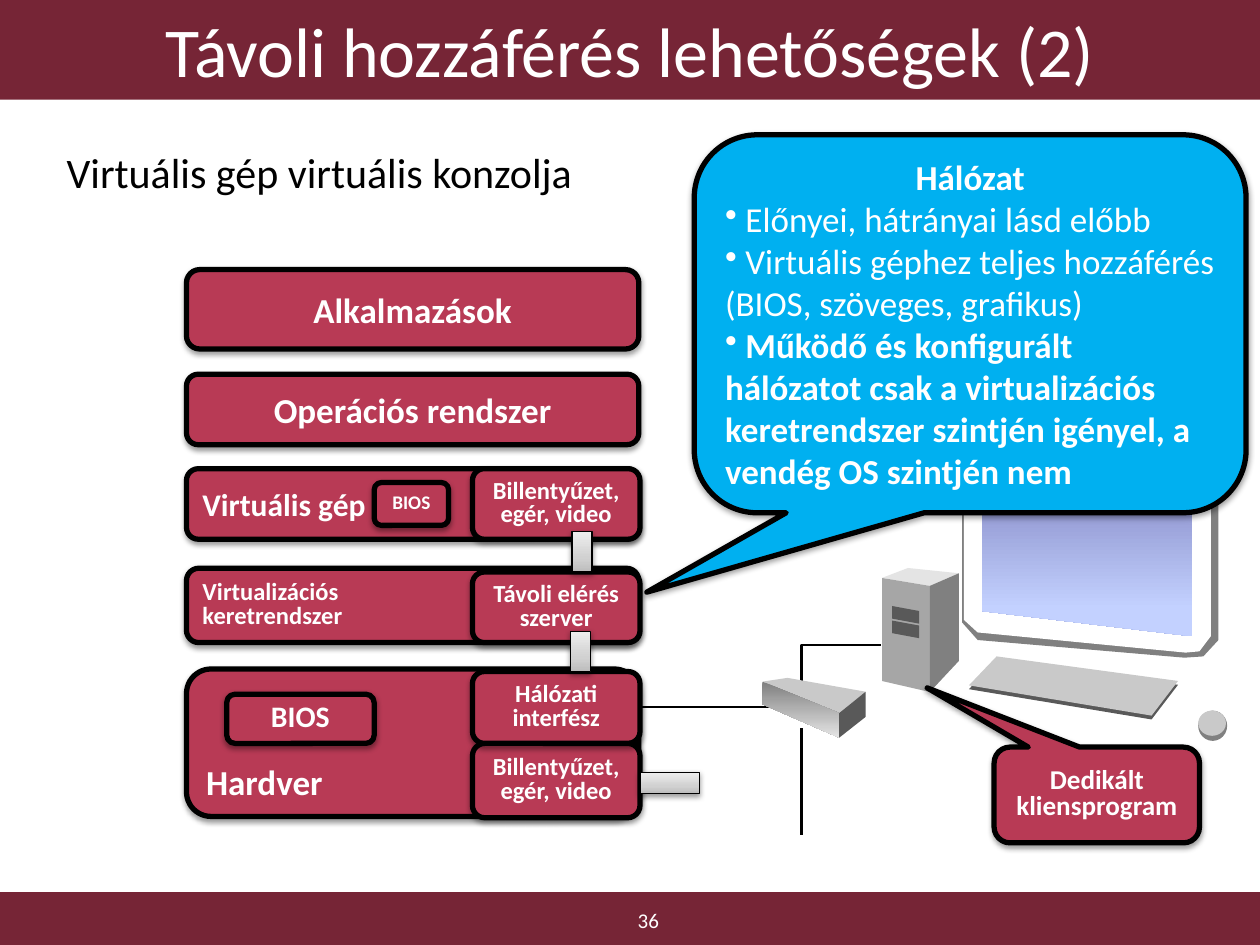
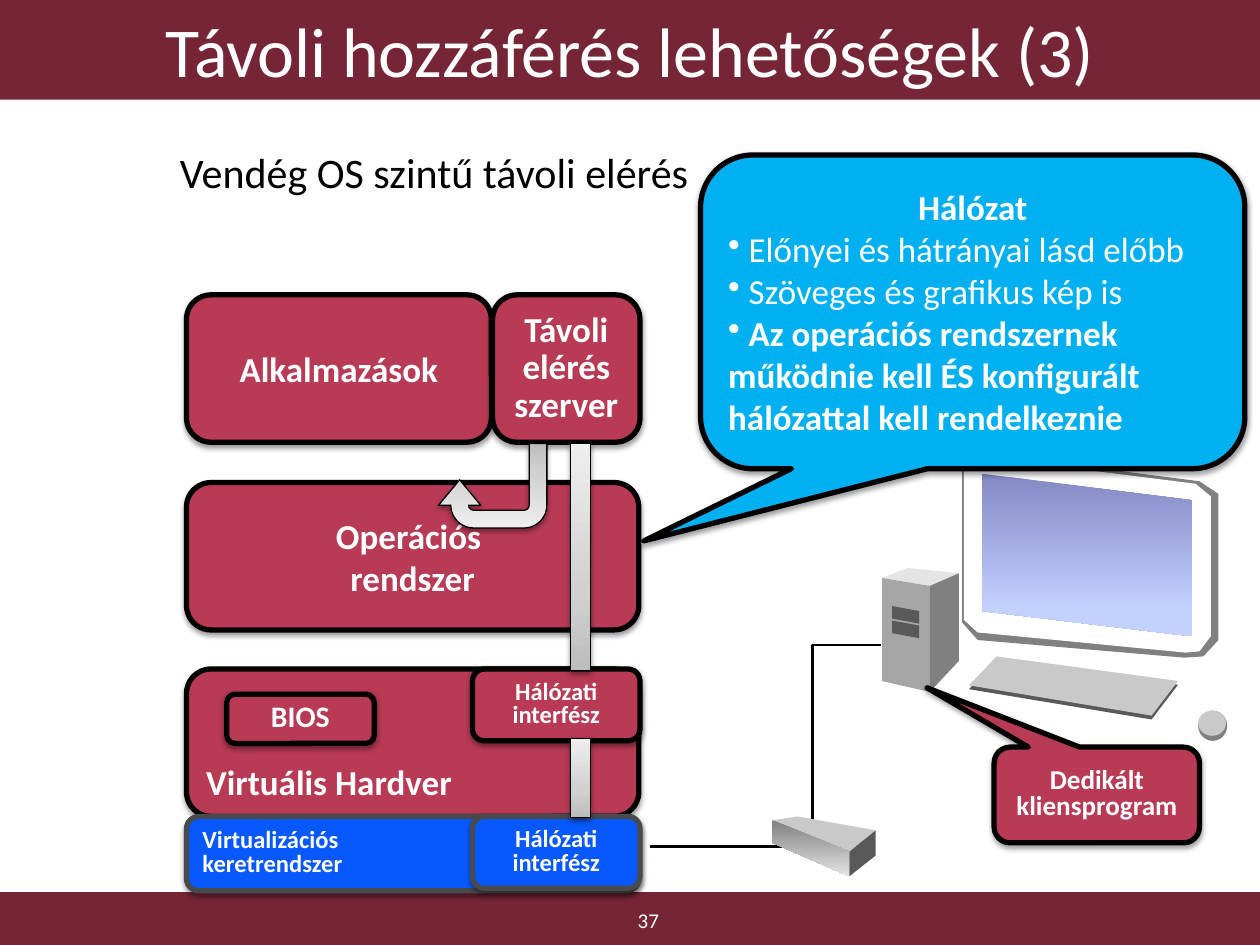
from copy import deepcopy
from dataclasses import dataclass
from functools import partial
from typing import NamedTuple

from lxml.etree import SubElement
from pptx import Presentation
from pptx.dml.color import RGBColor
from pptx.enum.shapes import MSO_CONNECTOR, MSO_SHAPE
from pptx.enum.text import MSO_ANCHOR, PP_ALIGN
from pptx.oxml.ns import qn
from pptx.util import Inches, Pt

COLS, ROWS = 100, 75
WIDTH, HEIGHT = Inches(10), Inches(7.5)
FONT = "Calibri"

WINE = RGBColor(0x76, 0x25, 0x36)
ROSE = RGBColor(0xB8, 0x3A, 0x55)
SKY = RGBColor(0x00, 0xB0, 0xF0)
BLUE = RGBColor(0x07, 0x59, 0xFF)
SLATE = RGBColor(0x48, 0x4A, 0x4D)
BLACK = RGBColor(0x00, 0x00, 0x00)
WHITE = RGBColor(0xFF, 0xFF, 0xFF)
COAL = RGBColor(0x59, 0x59, 0x59)
DARK = RGBColor(0x80, 0x80, 0x80)
GREY = RGBColor(0xA6, 0xA6, 0xA6)
PALE = RGBColor(0xC9, 0xC9, 0xC9)
LIGHT = RGBColor(0xE4, 0xE4, 0xE4)
STEEL = [(0, RGBColor(0xBD, 0xBD, 0xBD)), (0.35, RGBColor(0xD1, 0xD1, 0xD1)),
         (1, RGBColor(0xEE, 0xEE, 0xEE))]
GLASS = [(0, RGBColor(0x84, 0x88, 0xC4)), (0.83, RGBColor(0xC3, 0xD1, 0xFF))]
FRONT = [(0, DARK), (1, LIGHT)]

LEFT, WIDE = 14.8, 35.9
SIDE, SLIM = 37.5, 13.3
PIPE = 1.6


@dataclass(frozen=True)
class Box:
    y: float
    h: float
    text: str
    size: float = 20
    x: float = LEFT
    w: float = WIDE
    align: PP_ALIGN = PP_ALIGN.CENTER
    anchor: MSO_ANCHOR = MSO_ANCHOR.MIDDLE
    space: float = 1.0
    fill: RGBColor = ROSE
    edge: RGBColor = BLACK


@dataclass(frozen=True)
class Cloud:
    x: float
    y: float
    w: float
    h: float
    tip: tuple[float, float]
    plain: tuple[str, ...]
    strong: str


class Pipe(NamedTuple):
    x: float
    y: float
    w: float
    h: float


class Link(NamedTuple):
    x: float
    y: float
    to_x: float
    to_y: float


class Face(NamedTuple):
    tone: RGBColor | list
    points: list[tuple[float, float]]


@dataclass(frozen=True)
class Page:
    title: str
    lead: str
    lead_x: float
    number: int
    links: list[Link]
    hub: tuple[float, float]
    boxes: list[Box]
    pipes: list[Pipe]
    cloud: Cloud
    turn: Pipe | None = None


Side = partial(Box, size=14, x=SIDE, w=SLIM, space=0.8)
Base = partial(Box, align=PP_ALIGN.LEFT, anchor=MSO_ANCHOR.BOTTOM)
Frame = partial(Box, h=5.9, text="Virtualizációs \vkeretrendszer", size=14,
                align=PP_ALIGN.LEFT, space=0.8)
Chip = partial(Box, text="BIOS", space=0.8)
CHIP = Chip(y=55.1, h=3.9, size=17, x=18, w=11.7)
KEYS = "Billentyűzet,\negér, video"
NET = "Hálózati interfész"

SLOT = [(70.8, 48.1), (72.95, 48.5), (72.95, 49.5), (70.8, 49.1)]
BOARD = [(79.1, 52.1), (93.5, 54.05), (91.4, 56.8), (76.9, 54.4)]

HUB = [
    Face(PALE, [(0, 0.3), (2, 0), (8.2, 1.1), (6.1, 2.8)]),
    Face(FRONT, [(0, 0.3), (6.1, 2.8), (6.1, 4.75), (0, 2.1)]),
    Face(COAL, [(6.1, 2.8), (8.2, 1.1), (8.2, 3.1), (6.1, 4.75)]),
]
TOWER = [
    Face(LIGHT, [(70, 45.87), (72.06, 45.08), (76.1, 45.5), (73.8, 46.5)]),
    Face(GREY, [(70, 45.87), (73.8, 46.5), (73.8, 54.92), (70, 54.05)]),
    Face(DARK, [(73.8, 46.5), (76.1, 45.5), (76.1, 52.46), (73.8, 54.92)]),
    Face(COAL, SLOT),
    Face(COAL, [(x, y + 1.15) for x, y in SLOT]),
]
SCREEN = [
    Face(DARK, [(76.35, 36.7), (77.4, 35.9), (95.2, 38.2), (96.7, 39.2),
                (96.7, 50.8), (95.5, 52.1), (94, 52.2), (77.6, 50.8), (76.35, 49.4)]),
    Face(WHITE, [(76.5, 36.8), (77.5, 36.2), (94.9, 38.4), (96.1, 39.4),
                 (96.1, 50.5), (95.2, 51.7), (94.1, 51.8), (77.6, 50.2), (76.5, 49.2)]),
    Face(GLASS, [(77.94, 37.6), (94.6, 39.7), (94.6, 50.5), (77.94, 48.5)]),
    Face(COAL, [(x, y + 0.3) for x, y in BOARD]),
    Face(PALE, BOARD),
]

PAGES = [
    Page(
        "Távoli hozzáférés lehetőségek (2)", "Virtuális gép virtuális konzolja", 4.3, 36,
        [Link(69.9, 51.2, 63.6, 55.4), Link(50.8, 56.1, 63.6, 56.1),
         Link(63.6, 57.8, 63.6, 66.3)],
        (60.5, 53.8),
        [Base(53.1, 11.7, "Hardver"),
         Box(29.7, 5.6, "Operációs rendszer"),
         Box(21.4, 6.3, "Alkalmazások"),
         Side(59, 5.9, KEYS),
         Side(53.3, 5.7, NET),
         Frame(45.1),
         Box(37.2, 5.6, "Virtuális gép", 18, align=PP_ALIGN.LEFT),
         Side(37.2, 5.6, KEYS),
         Side(45.4, 5.6, "Távoli elérés\nszerver"),
         Chip(y=38.3, h=3.4, size=11, x=29.7, w=5.9),
         CHIP],
        [Pipe(50.8, 61.3, 4.7, 1.7), Pipe(45.4, 42.2, PIPE, 3.2),
         Pipe(45.3, 50.1, PIPE, 3.2)],
        Cloud(55.1, 10.7, 43.8, 30, (-0.586, 0.71),
              (" Előnyei, hátrányai lásd előbb",
               " Virtuális géphez teljes hozzáférés (BIOS, szöveges, grafikus)"),
              " Működő és konfigurált hálózatot csak a virtualizációs "
              "keretrendszer szintjén igényel, a vendég OS szintjén nem"),
    ),
    Page(
        "Távoli hozzáférés lehetőségek (3)", "Vendég OS szintű távoli elérés", 13.3, 37,
        [Link(69.9, 51.2, 64.5, 66.4), Link(51.6, 67.2, 64.4, 67.2)],
        (61.3, 64.8),
        [Base(53.1, 11.7, "Virtuális Hardver"),
         CHIP,
         Box(38.3, 11.7, "Operációs \vrendszer"),
         Box(23.4, 11.7, "Alkalmazások", w=24.2),
         Box(23.4, 11.7, "Távoli elérés szerver", x=39.1, w=11.7, space=0.9),
         Frame(64.8, fill=BLUE, edge=SLATE),
         Side(64.8, 5.7, NET, fill=BLUE, edge=SLATE),
         Side(53.1, 5.7, NET)],
        [Pipe(45.3, 35.2, PIPE, 18), Pipe(45.3, 58.6, PIPE, 6.3)],
        Cloud(55.6, 12.3, 43.2, 24.9, (-0.604, 0.73),
              (" Előnyei és hátrányai lásd előbb", " Szöveges és grafikus kép is"),
              " Az operációs rendszernek működnie kell ÉS konfigurált "
              "hálózattal kell rendelkeznie"),
        Pipe(34.8, 35.2, 8.6, 6.7),
    ),
]


def col(n: float) -> int:
    return round(WIDTH * n / COLS)


def row(n: float) -> int:
    return round(HEIGHT * n / ROWS)


def paint(shape, tone, edge=None, weight=3, angle=90) -> None:
    if isinstance(tone, list):
        shape.fill.gradient()
        shape.fill.gradient_angle = angle
        stops = shape._element.spPr.find(".//" + qn("a:gsLst"))
        while len(stops) < len(tone):
            stops.append(deepcopy(stops[0]))
        for stop, (place, color) in zip(shape.fill.gradient_stops, tone):
            stop.position, stop.color.rgb = place, color
    else:
        shape.fill.solid()
        shape.fill.fore_color.rgb = tone
    if edge is None:
        shape.line.fill.background()
    else:
        shape.line.color.rgb, shape.line.width = edge, Pt(weight)
    shape.shadow.inherit = False


def shadow(shape) -> None:
    group = shape._element.spPr.find(qn("a:effectLst"))
    outer = SubElement(group, qn("a:outerShdw"), blurRad=str(Pt(3.1)),
                       dist=str(Pt(1.6)), dir="5400000", rotWithShape="0")
    black = SubElement(outer, qn("a:srgbClr"), val=str(BLACK))
    SubElement(black, qn("a:alpha"), val="38000")


def form(slide, kind, x, y, w, h, tone, edge=None, weight=3):
    shape = slide.shapes.add_shape(kind, col(x), row(y), col(w), row(h))
    paint(shape, tone, edge, weight)
    if edge is not None:
        shadow(shape)
    return shape


def style(line, size, bold=False, color=WHITE, align=PP_ALIGN.CENTER, space=1.0) -> None:
    line.alignment, line.line_spacing = align, space
    line.font.name, line.font.size = FONT, Pt(size)
    line.font.bold, line.font.color.rgb = bold, color


def write(shape, text, size, anchor=MSO_ANCHOR.MIDDLE, **look) -> None:
    frame = shape.text_frame
    frame.word_wrap, frame.vertical_anchor = True, anchor
    frame.text = text
    for line in frame.paragraphs:
        style(line, size, **look)


def label(slide, x, y, w, h, text, size, **look) -> None:
    write(slide.shapes.add_textbox(col(x), row(y), col(w), row(h)), text, size, **look)


def block(slide, box: Box) -> None:
    shape = form(slide, MSO_SHAPE.ROUNDED_RECTANGLE, box.x, box.y, box.w, box.h,
                 box.fill, box.edge)
    write(shape, box.text, box.size, box.anchor, bold=True, align=box.align,
          space=box.space)


def bubble(slide, x, y, w, h, tone, tip):
    shape = form(slide, MSO_SHAPE.ROUNDED_RECTANGULAR_CALLOUT, x, y, w, h, tone, BLACK)
    shape.adjustments[0], shape.adjustments[1] = tip
    return shape


def pipe(slide, part: Pipe, kind=MSO_SHAPE.RECTANGLE):
    return form(slide, kind, *part, STEEL, BLACK, 0.75)


def wire(slide, link: Link) -> None:
    bent = link.x != link.to_x and link.y != link.to_y
    kind = MSO_CONNECTOR.ELBOW if bent else MSO_CONNECTOR.STRAIGHT
    line = slide.shapes.add_connector(kind, col(link.x), row(link.y),
                                      col(link.to_x), row(link.to_y))
    line.line.color.rgb, line.line.width = BLACK, Pt(1.5)
    shape = line._element.spPr
    if bent:
        shape.find(qn("a:prstGeom")).set("prst", "bentConnector2")
    SubElement(shape, qn("a:effectLst"))


def solid(slide, faces: list[Face], x: float = 0, y: float = 0) -> None:
    for face in faces:
        points = [(col(x + a), row(y + b)) for a, b in face.points]
        maker = slide.shapes.build_freeform(*points[0])
        maker.add_line_segments(points[1:], close=True)
        paint(maker.convert_to_shape(), face.tone, angle=270)


def cloud(slide, item: Cloud) -> None:
    shape = bubble(slide, item.x, item.y, item.w, item.h, SKY, item.tip)
    write(shape, "Hálózat", 20, bold=True)
    for text in (*item.plain, item.strong):
        line = shape.text_frame.add_paragraph()
        line.text = text
        SubElement(line._p.get_or_add_pPr(), qn("a:buChar"), char="•")
        style(line, 20, bold=text == item.strong, align=PP_ALIGN.LEFT)


def draw(deck, page: Page) -> None:
    slide = deck.slides.add_slide(deck.slide_layouts[6])
    form(slide, MSO_SHAPE.RECTANGLE, 0, 70.8, COLS, 4.2, WINE)
    write(form(slide, MSO_SHAPE.RECTANGLE, 0, 0, COLS, 7.9, WINE), page.title, 40)
    label(slide, page.lead_x, 11.1, 74.2, 10, page.lead, 24, color=BLACK,
          align=PP_ALIGN.LEFT, anchor=MSO_ANCHOR.TOP)
    label(slide, 35.2, 71.1, 32.5, 3.9, str(page.number), 12)
    for link in page.links:
        wire(slide, link)
    solid(slide, HUB, *page.hub)
    solid(slide, SCREEN + TOWER)
    form(slide, MSO_SHAPE.OVAL, 95.1, 56.4, 2.3, 2.4, DARK)
    form(slide, MSO_SHAPE.OVAL, 95.1, 56.4, 2.2, 2, PALE)
    for box in page.boxes:
        block(slide, box)
    for part in page.pipes:
        pipe(slide, part)
    if page.turn:
        arrow = pipe(slide, page.turn, MSO_SHAPE.U_TURN_ARROW)
        arrow.rotation = 180
        for place, value in enumerate((0.21, 0.25, 0.3, 0.44, 0.57)):
            arrow.adjustments[place] = value
    client = bubble(slide, 78.9, 59.3, 16.3, 7.6, ROSE, (-0.826, -1.119))
    write(client, "Dedikált kliensprogram", 15.5, bold=True, space=0.8)
    cloud(slide, page.cloud)


def main() -> None:
    deck = Presentation()
    deck.slide_width, deck.slide_height = WIDTH, HEIGHT
    for page in PAGES:
        draw(deck, page)
    deck.save("out.pptx")


if __name__ == "__main__":
    main()
